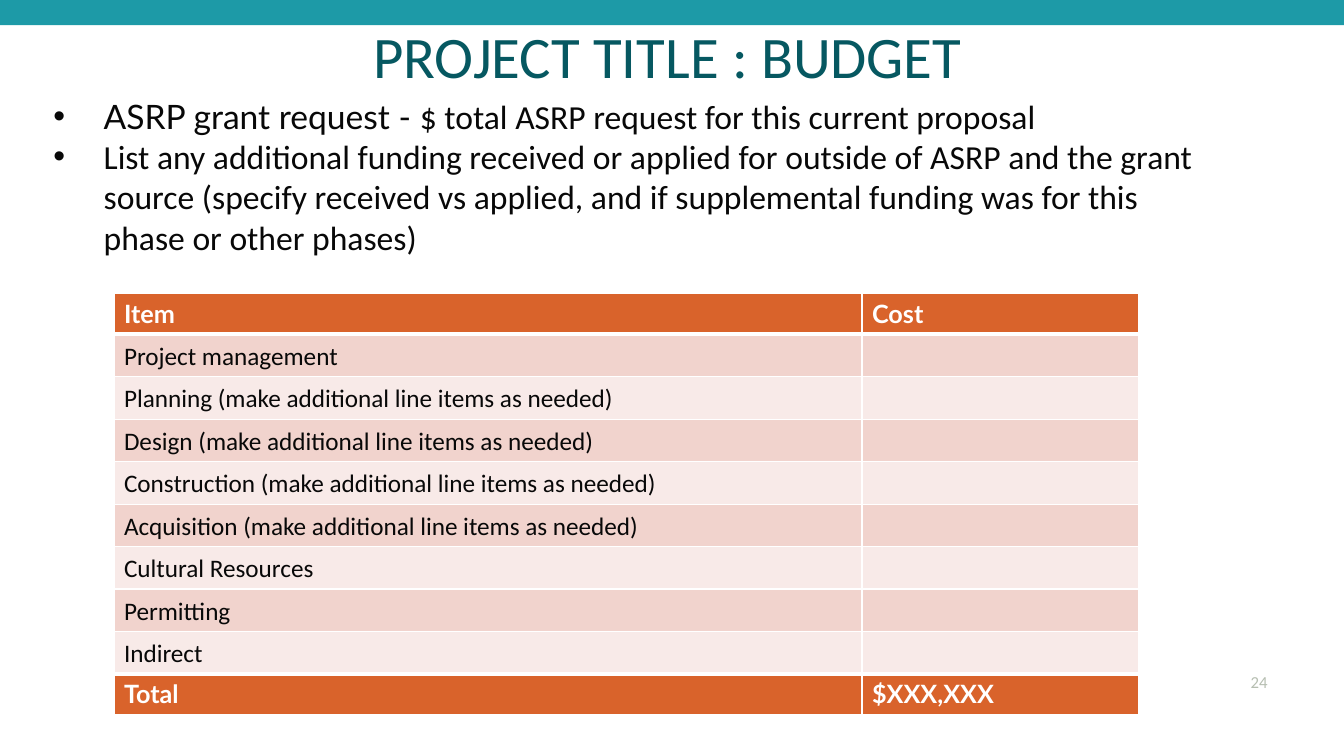
from lxml.etree import SubElement as Sub
from pptx import Presentation
from pptx.dml.color import RGBColor
from pptx.enum.shapes import MSO_SHAPE as Shape
from pptx.enum.text import MSO_ANCHOR as Anchor, PP_ALIGN as Align
from pptx.oxml.ns import qn
from pptx.util import Inches, Pt

TEAL, DARK, INK = "1D9AA7", "065861", "080808"
ORANGE, ROSE, PALE = "D9632B", "F1D3CD", "F8EAE8"
WHITE, GRAY = "FFFFFF", "B6BEB1"


def color(code):
    return RGBColor.from_string(code)


class Deck:
    main, alt = "Calibri", "Lato"

    def __init__(self):
        self.prs = Presentation()
        self.prs.slide_width = Inches(13.33)
        self.prs.slide_height = Inches(7.5)
        self.slide = self.prs.slides.add_slide(self.prs.slide_layouts[5])

    def place(self, item, box):
        item.left, item.top, item.width, item.height = map(Inches, box)

    def frame(self, item, inset, anchor=Anchor.TOP):
        frame = item.text_frame
        frame.word_wrap = True
        frame.vertical_anchor = anchor
        (frame.margin_left, frame.margin_top,
         frame.margin_right, frame.margin_bottom) = map(Inches, inset)
        return frame

    def run(self, para, text, size, code, face=main, bold=False):
        run = para.add_run()
        run.text = text
        font = run.font
        font.name, font.size, font.bold = face, Pt(size), bold
        font.color.rgb = color(code)

    def title(self, text, box):
        item = self.slide.shapes.title
        self.place(item, box)
        para = self.frame(item, (0, 0.05, 0, 0.05)).paragraphs[0]
        para.alignment = Align.CENTER
        self.run(para, text, 42, DARK)

    def bar(self, box, code):
        bar = self.slide.shapes.add_shape(Shape.RECTANGLE, *map(Inches, box))
        bar.shadow.inherit = False
        bar.fill.solid()
        bar.fill.fore_color.rgb = color(code)
        bar.line.fill.background()

    def text(self, box, inset, anchor=Anchor.TOP):
        item = self.slide.shapes.add_textbox(*map(Inches, box))
        return self.frame(item, inset, anchor)

    def bullets(self, box, items):
        frame = self.text(box, (0.1, 0.05, 0.1, 0.05))
        for i, runs in enumerate(items):
            para = frame.add_paragraph() if i else frame.paragraphs[0]
            props = para._p.get_or_add_pPr()
            props.set("marL", str(Inches(0.5)))
            props.set("indent", str(-Inches(0.5)))
            Sub(props, qn("a:buFont"), typeface="Arial")
            Sub(props, qn("a:buChar"), char="•")
            for text, face in runs:
                self.run(para, text, 24, INK, face)

    def number(self, text, box):
        para = self.text(box, (0, 0.05, 0.1, 0.05), Anchor.MIDDLE).paragraphs[0]
        para.alignment = Align.RIGHT
        self.run(para, text, 12, GRAY)

    def cell(self, cell, text, fill, strong, top, low):
        props = cell._tc.get_or_add_tcPr()
        for side, width in zip("LRTB", (1, 1, top, low)):
            line = Sub(props, qn(f"a:ln{side}"), w=str(Pt(width)))
            Sub(Sub(line, qn("a:solidFill")), qn("a:srgbClr"), val=WHITE)
        cell.fill.solid()
        cell.fill.fore_color.rgb = color(fill)
        para = cell.text_frame.paragraphs[0]
        if strong:
            self.run(para, text, 18, WHITE, self.alt, True)
        elif text:
            para.line_spacing = 1.07
            self.run(para, text, 18, INK)

    def table(self, box, widths, rows):
        last = len(rows) - 1
        grid = self.slide.shapes.add_table(
            len(rows), len(widths), *map(Inches, box)).table
        for col, width in zip(grid.columns, widths):
            col.width = Inches(width)
        for i, row in enumerate(rows):
            strong = i in (0, last)
            fill = ORANGE if strong else ROSE if i % 2 else PALE
            # Thick rules set off the header and the total
            top = 3 if i in (1, last) else 1
            low = 3 if i in (0, last - 1) else 1
            for j, text in enumerate(row):
                self.cell(grid.cell(i, j), text, fill, strong, top, low)


def main():
    deck = Deck()

    # Page number and top band
    deck.number("24", (11.78, 6.61, 0.89, 0.3))
    deck.bar((0, 0, 13.33, 0.25), TEAL)

    # Title and funding notes
    deck.title("PROJECT TITLE : BUDGET", (0, 0.15, 13.24, 0.75))
    deck.bullets((0.43, 0.9, 11.79, 1.72), [
        [("ASRP grant request - ", deck.alt),
         ("$ total ASRP request for this current proposal", deck.main)],
        [("List any additional funding received or applied for outside of "
          "ASRP and the grant source (specify received vs applied, and if "
          "supplemental funding was for this phase or other phases)",
          deck.main)],
    ])

    # Budget table
    more = "(make additional line items as needed)"
    steps = ["Planning", "Design", "Construction", "Acquisition"]
    items = ["Project management", *(f"{step} {more}" for step in steps),
             "Cultural Resources", "Permitting", "Indirect"]
    rows = [("Item", "Cost"), *((item, "") for item in items),
            ("Total", "$XXX,XXX")]
    deck.table((1.13, 2.91, 10.15, 4.07), (7.42, 2.74), rows)

    deck.prs.save("out.pptx")


if __name__ == "__main__":
    main()
